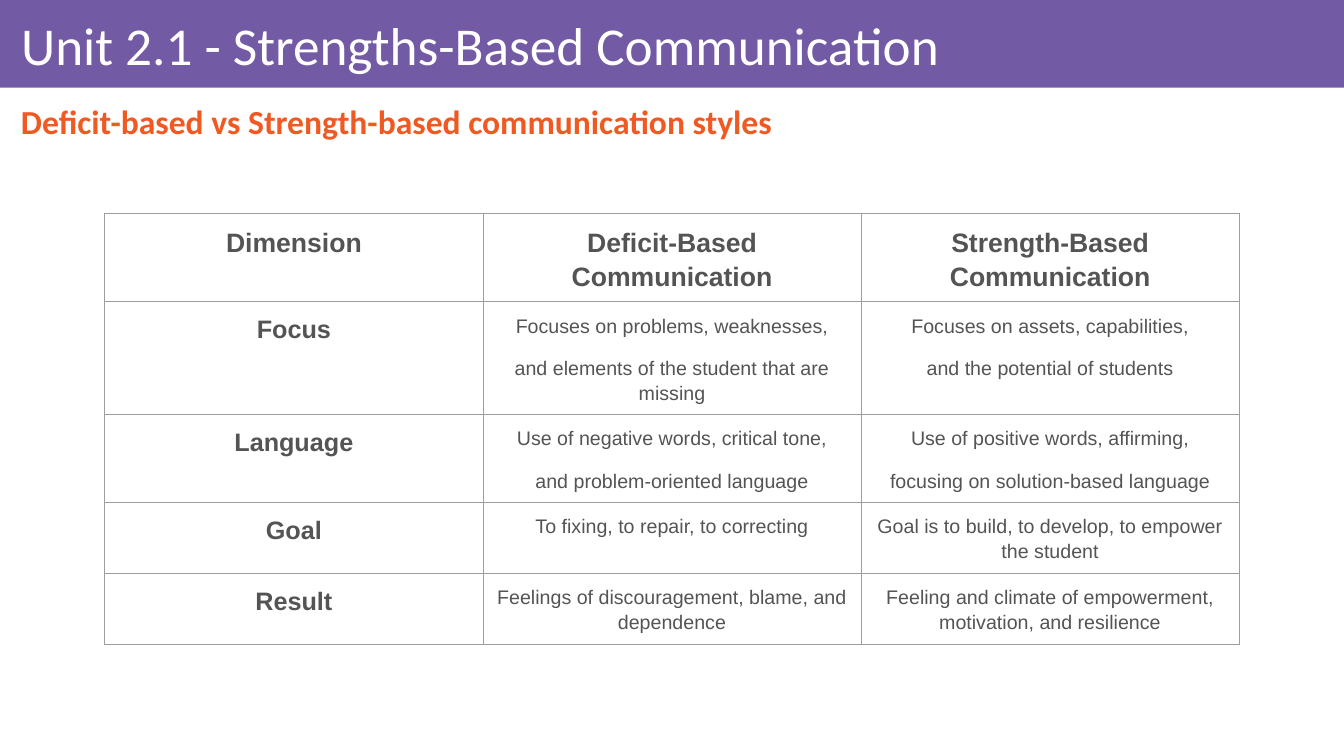
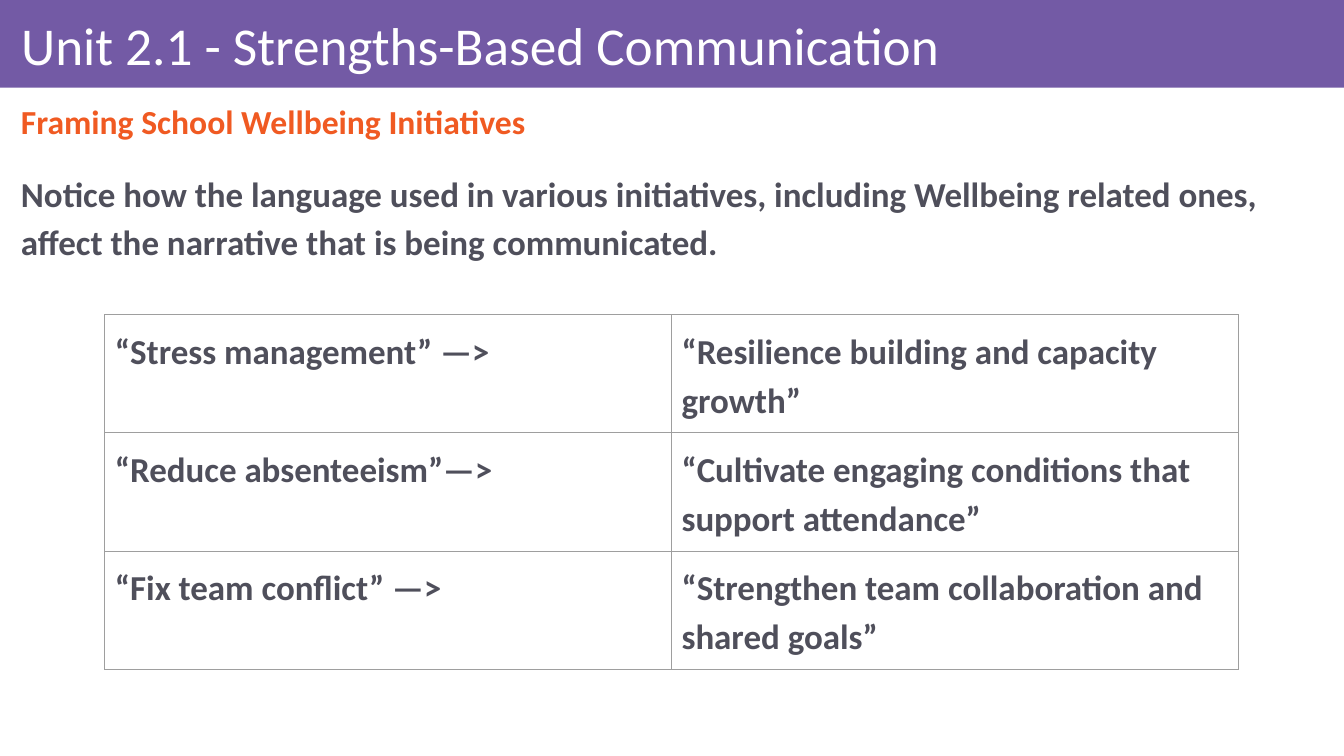
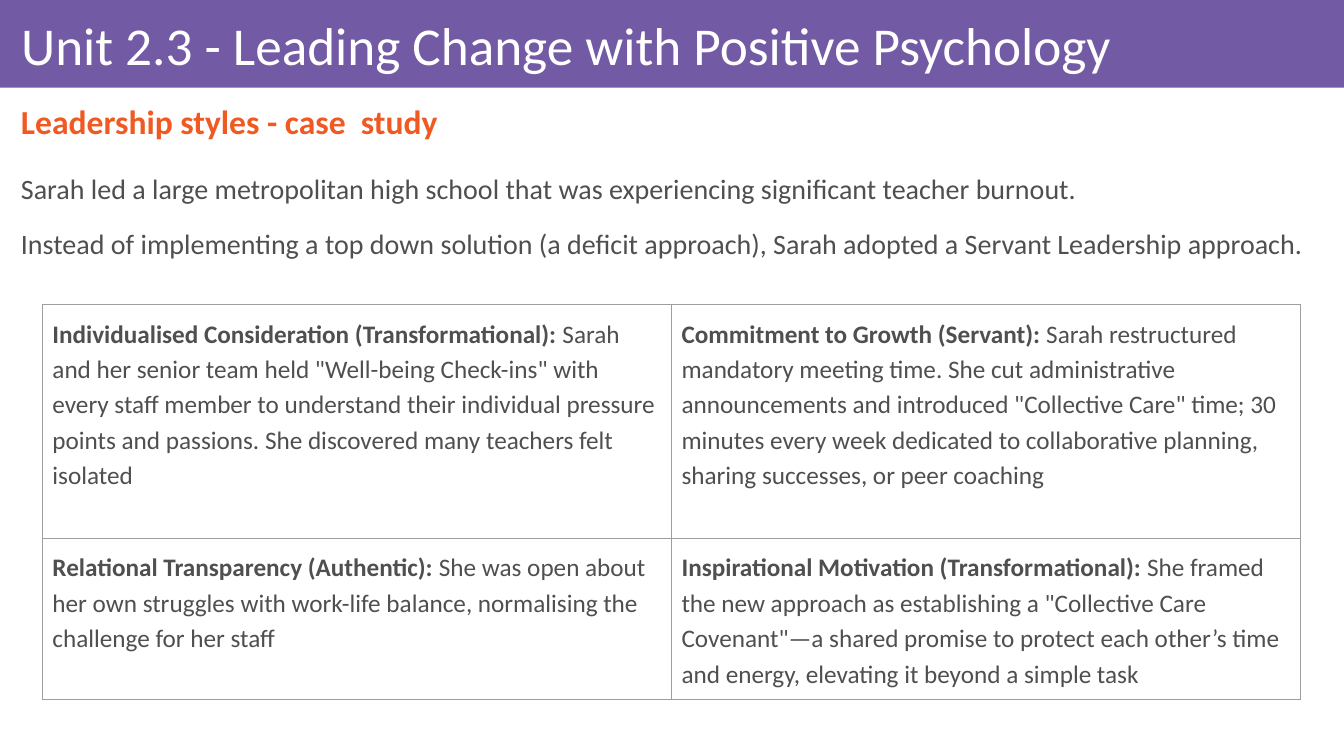
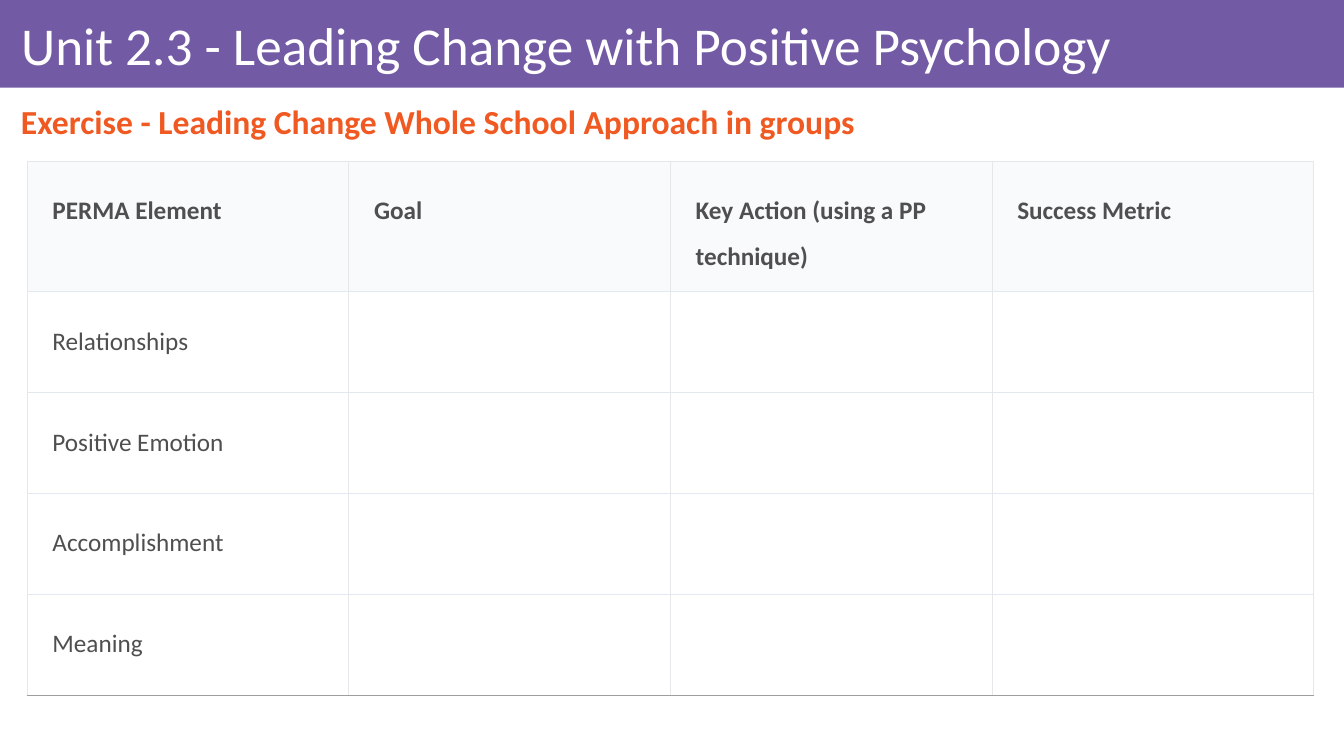
from lxml import etree
from pptx import Presentation
from pptx.dml.color import RGBColor
from pptx.enum.shapes import MSO_SHAPE
from pptx.enum.text import MSO_ANCHOR, MSO_AUTO_SIZE, PP_ALIGN
from pptx.oxml.ns import qn
from pptx.util import Inches, Pt

RECT = MSO_SHAPE.RECTANGLE
TOP, MIDDLE = MSO_ANCHOR.TOP, MSO_ANCHOR.MIDDLE
LEFT, CENTER, JUSTIFY = PP_ALIGN.LEFT, PP_ALIGN.CENTER, PP_ALIGN.JUSTIFY
NO_FIT = MSO_AUTO_SIZE.NONE
TITLE_ONLY = 5

COLORS = {
    "band": "735AA5", "white": "FFFFFF", "orange": "F05A22",
    "slate": "4F4F5B", "text": "4F4F50", "grey": "545454",
    "rule": "9E9E9E", "side": "E5E7EB", "row_rule": "E2E8F0", "head": "F8FAFC",
}
SLIDE_W, SLIDE_H = 13.33, 7.5
BAND_H = 0.87
TITLE_BOX = (0.11, 0.09, 13.06, 0.78)
SUBTITLE_BOX = (0.11, 0.93, 13.06, 0.6)
BODY_BOX = (0.11, 1.6, 13.06, 5.78)


def style(size, color, bold=False, font="Calibri", align=LEFT, spacing=1.15, before=12):
    return {
        "font": {"size": Pt(size), "name": font, "bold": bold},
        "color": COLORS[color],
        "para": {"alignment": align, "line_spacing": spacing,
                 "space_before": Pt(before), "space_after": Pt(0)},
    }


TITLE = style(38, "white", spacing=0.9, before=0)
SUBTITLE = style(24, "orange", True, align=JUSTIFY, spacing=0.9, before=0)
STATEMENT = style(25, "slate", True)
STORY = style(20, "text")
STORY_CELL = style(18, "text")
COMPARE_HEAD = style(19, "grey", True, "Arial", CENTER)
COMPARE_LABEL = style(18, "grey", True, "Arial", CENTER)
COMPARE_CELL = style(14, "grey", False, "Arial", CENTER)
PLAN_HEAD = style(18, "text", True, spacing=1.5, before=0)
PLAN_CELL = style(18, "text", spacing=1.5, before=0)

GRID = {edge: ("rule", 0.75) for edge in "LRTB"}
PLAN_GRID = {"L": ("side", 0.75), "R": ("side", 0.75),
             "T": ("row_rule", 0.68), "B": ("row_rule", 0.68)}


def set_all(obj, values):
    for name, value in values.items():
        setattr(obj, name, value)


def rgb(name):
    return RGBColor.from_string(COLORS[name])


def box(left, top, width, height):
    return [Inches(v) for v in (left, top, width, height)]


def write(tf, paragraphs, fmt):
    """Fill a text frame; a (lead, rest) pair is a paragraph with a bold lead."""
    for i, content in enumerate(paragraphs):
        p = tf.paragraphs[0] if i == 0 else tf.add_paragraph()
        set_all(p, fmt["para"])
        parts = [content] if isinstance(content, str) else content
        for j, text in enumerate(parts):
            r = p.add_run()
            r.text = text
            set_all(r.font, fmt["font"])
            r.font.color.rgb = RGBColor.from_string(fmt["color"])
            if len(parts) > 1:
                r.font.bold = j == 0


def set_frame(tf, anchor, insets):
    sides = ("margin_left", "margin_top", "margin_right", "margin_bottom")
    set_all(tf, dict(zip(sides, map(Inches, insets))))
    set_all(tf, {"word_wrap": True, "auto_size": NO_FIT, "vertical_anchor": anchor})


def add_text(slide, area, paragraphs, fmt, anchor=TOP):
    tf = slide.shapes.add_textbox(*box(*area)).text_frame
    set_frame(tf, anchor, (0.1, 0.05, 0.1, 0.05))
    write(tf, paragraphs, fmt)


def add_unit_slide(prs, title, subtitle):
    """Add a slide with the title band and the orange subtitle."""
    slide = prs.slides.add_slide(prs.slide_layouts[TITLE_ONLY])
    band = slide.shapes.add_shape(RECT, *box(0, 0, SLIDE_W, BAND_H))
    band.shadow.inherit = False
    band.fill.solid()
    band.fill.fore_color.rgb = rgb("band")
    band.line.fill.background()

    sp = slide.shapes.title
    sp._element.addprevious(band._element)
    set_all(sp, dict(zip(("left", "top", "width", "height"), box(*TITLE_BOX))))
    set_frame(sp.text_frame, MIDDLE, (0.1, 0.06, 0.06, 0.06))
    write(sp.text_frame, [title], TITLE)
    add_text(slide, SUBTITLE_BOX, [subtitle], SUBTITLE, MIDDLE)
    return slide


def set_borders(cell, borders):
    tc_pr = cell._tc.get_or_add_tcPr()
    for i, edge in enumerate("LRTB"):
        color, width = borders[edge]
        ln = etree.Element(qn(f"a:ln{edge}"), w=str(Pt(width)))
        fill = etree.SubElement(ln, qn("a:solidFill"))
        etree.SubElement(fill, qn("a:srgbClr"), val=COLORS[color])
        tc_pr.insert(i, ln)


def add_grid(slide, left, top, col_w, row_heights, rows, cell_style,
             borders=lambda row: GRID, inset=(0.1, 0.1), head_fill=None):
    """Add a table; cell_style(row, col) and borders(row) give each cell's format."""
    n_cols = len(rows[0])
    area = box(left, top, col_w * n_cols, sum(row_heights))
    table = slide.shapes.add_table(len(rows), n_cols, *area).table
    set_all(table, {"first_row": False, "horz_banding": False})
    for col in table.columns:
        col.width = Inches(col_w)
    for r, (height, row) in enumerate(zip(row_heights, rows)):
        table.rows[r].height = Inches(height)
        for c, paragraphs in enumerate(row):
            cell = table.cell(r, c)
            across, down = map(Inches, inset)
            set_all(cell, {"margin_left": across, "margin_right": across,
                           "margin_top": down, "margin_bottom": down})
            if head_fill and r == 0:
                cell.fill.solid()
                cell.fill.fore_color.rgb = rgb(head_fill)
            else:
                cell.fill.background()
            set_borders(cell, borders(r))
            write(cell.text_frame, paragraphs, cell_style(r, c))


def add_styles_comparison(prs, unit):
    slide = add_unit_slide(prs, unit, "Deficit-based vs Strength-based communication styles")
    rows = [
        [["Dimension"], ["Deficit-Based Communication"], ["Strength-Based Communication"]],
        [["Focus"],
         ["Focuses on problems, weaknesses,", "and elements of the student that are missing"],
         ["Focuses on assets, capabilities,", "and the potential of students"]],
        [["Language"],
         ["Use of negative words, critical tone,", "and problem-oriented language"],
         ["Use of positive words, affirming,", "focusing on solution-based language"]],
        [["Goal"], ["To fixing, to repair, to correcting"],
         ["Goal is to build, to develop, to empower the student"]],
        [["Result"], ["Feelings of discouragement, blame, and dependence"],
         ["Feeling and climate of empowerment, motivation, and resilience"]],
    ]

    def cell_style(r, c):
        if r == 0:
            return COMPARE_HEAD
        return COMPARE_LABEL if c == 0 else COMPARE_CELL

    add_grid(slide, 1.04, 2.12, 3.75, [0.87, 1.12, 0.86, 0.7, 0.7], rows, cell_style)


def add_reframing(prs, unit):
    slide = add_unit_slide(prs, unit, "Framing School Wellbeing Initiatives")
    add_text(slide, BODY_BOX, [
        "Notice how the language used in various initiatives, including Wellbeing "
        "related ones, affect the narrative that is being communicated."], STATEMENT)
    rows = [
        [["“Stress management” —>"], ["“Resilience building and capacity growth”"]],
        [["“Reduce absenteeism”—>"],
         ["“Cultivate engaging conditions that support attendance”"]],
        [["“Fix team conflict” —>"], ["“Strengthen team collaboration and shared goals”"]],
    ]
    add_grid(slide, 1.04, 3.12, 5.62, [1.17] * 3, rows, lambda r, c: STATEMENT)


def add_case_study(prs, unit):
    slide = add_unit_slide(prs, unit, "Leadership styles - case  study")
    add_text(slide, BODY_BOX, [
        "Sarah led a large metropolitan high school that was experiencing significant "
        "teacher burnout.",
        "Instead of implementing a top down solution (a deficit approach), Sarah adopted "
        "a Servant Leadership approach."], STORY)
    rows = [
        [[("Individualised Consideration (Transformational):",
           " Sarah and her senior team held \"Well-being Check-ins\" with every staff "
           "member to understand their individual pressure points and passions. She "
           "discovered many teachers felt isolated")],
         [("Commitment to Growth (Servant):",
           " Sarah restructured mandatory meeting time. She cut administrative "
           "announcements and introduced \"Collective Care\" time; 30 minutes every week "
           "dedicated to collaborative planning, sharing successes, or peer coaching")]],
        [[("Relational Transparency (Authentic):",
           " She was open about her own struggles with work-life balance, normalising "
           "the challenge for her staff")],
         [("Inspirational Motivation (Transformational):",
           " She framed the new approach as establishing a \"Collective Care "
           "Covenant\"—a shared promise to protect each other’s time and energy, "
           "elevating it beyond a simple task")]],
    ]
    add_grid(slide, 0.42, 3.02, 6.24, [2.32, 1.59], rows, lambda r, c: STORY_CELL)


def add_exercise(prs, unit):
    slide = add_unit_slide(prs, unit,
                           "Exercise - Leading Change Whole School Approach in groups")
    heads = ["PERMA Element", "Goal", "Key Action (using a PP technique)", "Success Metric"]
    elements = ["Relationships", "Positive Emotion", "Accomplishment", "Meaning"]
    rows = [[[head] for head in heads]]
    rows += [[[element], [], [], []] for element in elements]

    def borders(r):
        if r == 0:
            return {**PLAN_GRID, "T": ("side", 0.75)}
        return {**PLAN_GRID, "B": ("rule", 0.75)} if r == len(elements) else PLAN_GRID

    add_grid(slide, 0.27, 1.6, 3.19, [1.29] + [1.0] * len(elements), rows,
             lambda r, c: PLAN_CELL if r else PLAN_HEAD,
             borders, (0.25, 0.19), "head")


def main():
    prs = Presentation()
    prs.slide_width, prs.slide_height = Inches(SLIDE_W), Inches(SLIDE_H)
    communication = "Unit 2.1 - Strengths-Based Communication"
    change = "Unit 2.3 - Leading Change with Positive Psychology"
    add_styles_comparison(prs, communication)
    add_reframing(prs, communication)
    add_case_study(prs, change)
    add_exercise(prs, change)
    prs.save("out.pptx")


if __name__ == "__main__":
    main()
